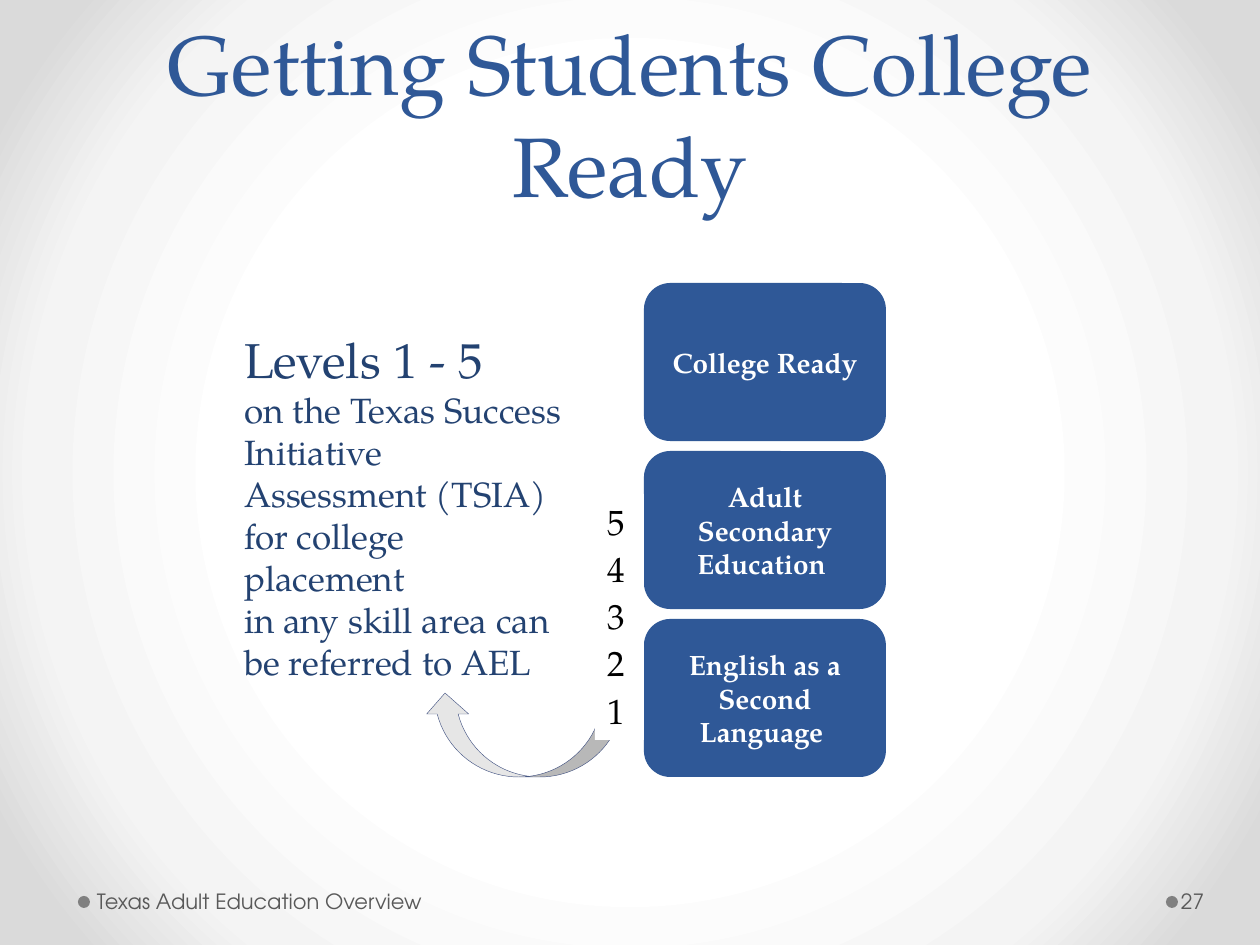
from pptx import Presentation, util as u
from pptx.dml.color import RGBColor as C
from pptx.enum import shapes, text
from pptx.oxml import parse_xml
from pptx.oxml.ns import nsdecls, qn

PX = 914400 / 126
BLUE, NAVY, EDGE = C(0x2F, 0x58, 0x97), C(0x23, 0x42, 0x71), C(0x47, 0x57, 0x85)
WHITE, BLACK, PALE = C(255, 255, 255), C(0, 0, 0), C(0xE6, 0xE6, 0xE6)
GREY, DARK = C(0x80, 0x80, 0x80), C(0x59, 0x59, 0x59)
SERIF, SANS = "TeX Gyre Pagella", "TeX Gyre Adventor"
MID, LEFT = text.PP_ALIGN.CENTER, text.PP_ALIGN.LEFT
KIND = shapes.MSO_SHAPE

TITLE = "Getting Students College Ready"
STEPS = ["College Ready", "Adult Secondary Education ", "English as a Second Language "]
LEVELS = ["5", "4", "3", "2", "1"]
NOTE = [("Levels 1 - 5 ", 28),
        ("on the Texas Success Initiative Assessment (TSIA) for college placement ", 20),
        ("in any skill area can be referred to AEL", 20)]
FOOT = [("27", 1166, (1177, 876, 77, 50), (4, 6, 6, 6)),
        ("Texas Adult Education Overview", 78, (91, 876, 392, 50), (6, 6, 13, 6))]
STOPS = [(50, WHITE), (76, C(0xF4, 0xF4, 0xF4)), (92, C(0xDA, 0xDA, 0xDA))]
STEP = dict(left=644, top=283, wide=242, high=158, pitch=168)


def emu(*nums):
    return [u.Emu(round(n * PX)) for n in nums]


def put(item, vals):
    for key, val in vals.items():
        setattr(item, key, val)


def style(run, size, color, face=SERIF, bold=False):
    put(run.font, dict(size=u.Pt(size), name=face, bold=bold))
    run.font.color.rgb = color


def shape(kind, box, fill, line=None):
    s = slide.shapes.add_shape(kind, *emu(*box))
    s.shadow.inherit = False
    s.fill.solid()
    s.fill.fore_color.rgb = fill
    if line:
        s.line.color.rgb, s.line.width = line, u.Pt(0.25)
    else:
        s.line.fill.background()
    return s


def frame(s, anchor, pads=(13, 6, 13, 6)):
    sides = ("margin_left", "margin_top", "margin_right", "margin_bottom")
    put(s.text_frame, dict(zip(sides, emu(*pads)), word_wrap=True, vertical_anchor=anchor))
    return s.text_frame


def line(para, words, size, color, align=LEFT, **kw):
    para.alignment = align
    run = para.add_run()
    run.text = words
    style(run, size, color, **kw)


deck = Presentation()
deck.slide_width, deck.slide_height = emu(1260, 945)
slide = deck.slides.add_slide(deck.slide_layouts[5])

slide.background.fill.gradient()
grad = slide.element.find(".//" + qn("a:gradFill"))
stops = "".join(f'<a:gs pos="{p * 1000}"><a:srgbClr val="{c}"/></a:gs>' for p, c in STOPS)
half = " ".join(f'{side}="50000"' for side in "ltrb")
grad.getparent().replace(grad, parse_xml(
    f'<a:gradFill {nsdecls("a")} rotWithShape="1"><a:gsLst>{stops}</a:gsLst>'
    f'<a:path path="circle"><a:fillToRect {half}/></a:path></a:gradFill>'))

for words, dot, box, pads in FOOT:
    shape(KIND.OVAL, (dot, 896, 12, 12), GREY)
    tf = frame(slide.shapes.add_textbox(*emu(*box)), text.MSO_ANCHOR.MIDDLE, pads)
    line(tf.paragraphs[0], words, 12, DARK, face=SANS)

arrow = shape(KIND.CURVED_LEFT_ARROW, (482, 635, 84, 200), PALE, EDGE)
arrow.rotation = 90

for i, words in enumerate(STEPS):
    top = STEP["top"] + i * STEP["pitch"]
    box = shape(KIND.ROUNDED_RECTANGLE, (STEP["left"], top, STEP["wide"], STEP["high"]), BLUE)
    tf = frame(box, text.MSO_ANCHOR.MIDDLE)
    line(tf.paragraphs[0], words, 16, WHITE, MID, bold=True)

tf = frame(slide.shapes.add_textbox(*emu(231, 324, 349, 369)), text.MSO_ANCHOR.TOP)
para = tf.paragraphs[0]
for i, (words, size) in enumerate(NOTE):
    if i:
        para.add_line_break()
    line(para, words, size, NAVY)

tf = frame(shape(KIND.RECTANGLE, (595, 494, 49, 246), WHITE), text.MSO_ANCHOR.TOP)
for i, words in enumerate(LEVELS):
    para = tf.add_paragraph() if i else tf.paragraphs[0]
    para.space_before = u.Pt(3)
    line(para, words, 20, BLACK)

title = slide.shapes.title
put(title, dict(zip(("left", "top", "width", "height"), emu(63, 0, 1134, 220))))
para = frame(title, text.MSO_ANCHOR.BOTTOM).paragraphs[0]
line(para, TITLE, 48, BLUE, MID)
para.line_spacing = u.Pt(58)

deck.save("out.pptx")
